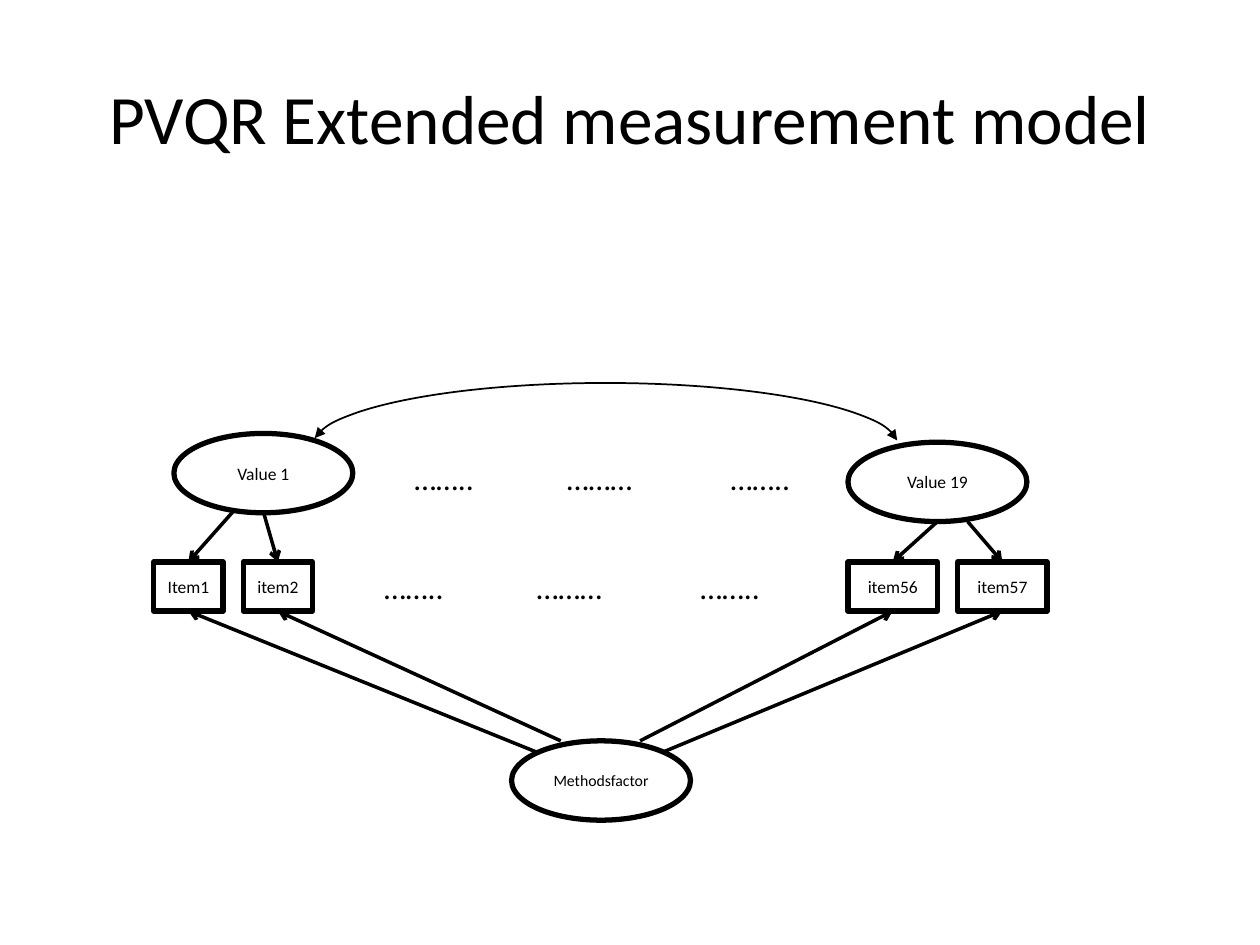
"""Build the PVQR extended measurement model slide."""
from pptx import Presentation
from pptx.dml.color import RGBColor
from pptx.enum.shapes import MSO_CONNECTOR, MSO_SHAPE
from pptx.enum.text import MSO_ANCHOR, PP_ALIGN
from pptx.oxml.ns import qn
from pptx.util import Inches, Pt
from lxml.etree import SubElement

COLORS = {"ink": "000000", "background": "FFFFFF"}
FONT = "Calibri"
TITLE = "PVQR Extended measurement model"
ELLIPSE_SIZE = (1.42, 0.63)
ITEM_TOP, ITEM_HEIGHT = 4.46, 0.39

FACTORS = [
    ("Value 1", 1.38, 3.44, 10),
    ("Value 19", 6.73, 3.51, 10),
    ("Methodsfactor", 4.06, 5.88, 9),
]
ITEMS = [
    ("Item1", 1.22, 0.55, (1.85, 4.06), (4.26, 5.97)),
    ("item2", 1.93, 0.55, (2.09, 4.06), (4.45, 5.88)),
    ("item56", 6.73, 0.71, (7.44, 4.14), (5.08, 5.88)),
    ("item57", 7.6, 0.71, (7.68, 4.14), (5.26, 5.97)),
]
DOTS = ["……..", "………", "…….."]
DOT_TABS = [1.21, 2.51]
DOT_ROWS = [(2.95, 4.46), (3.19, 3.59)]


def color(name):
    return RGBColor.from_string(COLORS[name])


def write_text(shape, text, size, align=PP_ALIGN.CENTER, anchor=MSO_ANCHOR.MIDDLE, wrap=True):
    frame = shape.text_frame
    frame.word_wrap = wrap
    frame.vertical_anchor = anchor
    paragraph = frame.paragraphs[0]
    paragraph.alignment = align
    run = paragraph.add_run()
    run.text = text
    run.font.size = Pt(size)
    run.font.name = FONT
    run.font.color.rgb = color("ink")
    return paragraph


def add_text(slide, text, box, **style):
    textbox = slide.shapes.add_textbox(*map(Inches, box))
    return write_text(textbox, text, **style)


def add_outline(slide, preset, box, weight=3):
    shape = slide.shapes.add_shape(preset, *map(Inches, box))
    shape.shadow.inherit = False
    shape.fill.background()
    shape.line.color.rgb = color("ink")
    shape.line.width = Pt(weight)
    return shape


def add_arrowhead(shape, end, kind):
    SubElement(shape.line._get_or_add_ln(), qn(f"a:{end}"), type=kind)


def add_path(slide, start, item, site):
    x, y = map(Inches, start)
    connector = slide.shapes.add_connector(MSO_CONNECTOR.STRAIGHT, x, y, x, y)
    connector.end_connect(item, site)
    connector.line.color.rgb = color("ink")
    connector.line.width = Pt(2)
    add_arrowhead(connector, "tailEnd", "arrow")
    SubElement(connector._element.spPr, qn("a:effectLst"))


def add_covariance(slide):
    arc = add_outline(slide, MSO_SHAPE.ARC, (2.48, 3.04, 4.65, 1), weight=1)
    arc.adjustments[0] = 108.65
    arc.adjustments[1] = 215.08
    arc._element.spPr.xfrm.set("flipH", "1")
    for end in ("headEnd", "tailEnd"):
        add_arrowhead(arc, end, "triangle")


def add_dots(slide, left, top):
    paragraph = add_text(slide, "\t".join(DOTS), (left, top, 3.31, 0.4), size=18,
                         align=PP_ALIGN.LEFT, anchor=MSO_ANCHOR.TOP)
    tabs = SubElement(paragraph._p.get_or_add_pPr(), qn("a:tabLst"))
    for position in DOT_TABS:
        SubElement(tabs, qn("a:tab"), pos=str(Inches(position)), algn="l")


def main():
    presentation = Presentation()
    presentation.slide_width, presentation.slide_height = Inches(10), Inches(7.5)
    slide = presentation.slides.add_slide(presentation.slide_layouts[6])
    slide.background.fill.solid()
    slide.background.fill.fore_color.rgb = color("background")

    add_text(slide, TITLE, (0.5, 0.3, 9, 1.25), size=39.6)
    for label, left, top, size in FACTORS:
        ellipse = add_outline(slide, MSO_SHAPE.OVAL, (left, top, *ELLIPSE_SIZE))
        write_text(ellipse, label, size)
    add_covariance(slide)
    for label, left, width, value_point, method_point in ITEMS:
        item = add_outline(slide, MSO_SHAPE.RECTANGLE, (left, ITEM_TOP, width, ITEM_HEIGHT))
        write_text(item, label, 10, wrap=False)
        add_path(slide, value_point, item, 0)
        add_path(slide, method_point, item, 2)
    for left, top in DOT_ROWS:
        add_dots(slide, left, top)
    presentation.save("out.pptx")


if __name__ == "__main__":
    main()
